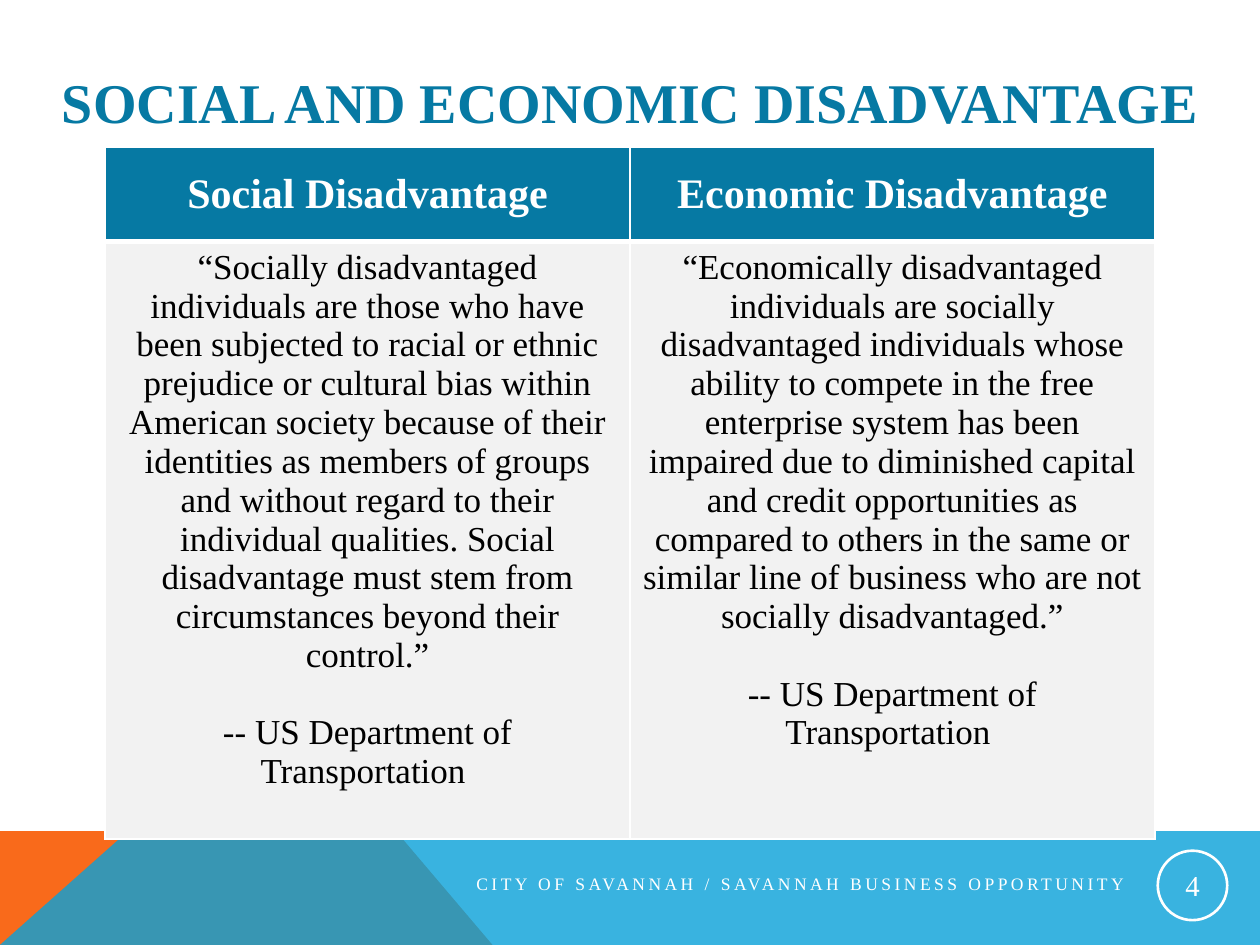
from lxml import etree
from pptx import Presentation
from pptx.dml.color import RGBColor
from pptx.enum.shapes import MSO_SHAPE as Shape
from pptx.enum.text import MSO_ANCHOR as Anchor, PP_ALIGN as Align
from pptx.oxml.ns import qn
from pptx.util import Cm, Pt

FONT = "Times New Roman"
WHITE = RGBColor(0xFF, 0xFF, 0xFF)
BLACK = RGBColor(0x00, 0x00, 0x00)
TEAL = RGBColor(0x06, 0x79, 0xA3)
BLUE = RGBColor(0x08, 0xA1, 0xD9)
ORANGE = RGBColor(0xF9, 0x6A, 0x1B)
GREY = RGBColor(0xF2, 0xF2, 0xF2)

SOURCE = "-- US Department of Transportation "
COLUMNS = [
    ("Social Disadvantage",
     "“Socially disadvantaged individuals are those who have been subjected to "
     "racial or ethnic prejudice or cultural bias within American society because "
     "of their identities as members of groups and without regard to their "
     "individual qualities. Social disadvantage must stem from circumstances "
     "beyond their control.”"),
    ("Economic Disadvantage",
     "“Economically disadvantaged individuals are socially disadvantaged "
     "individuals whose ability to compete in the free enterprise system has been "
     "impaired due to diminished capital and credit opportunities as compared to "
     "others in the same or similar line of business who are not socially "
     "disadvantaged.”"),
]


def add_run(p, text, size, color, bold=False, align=Align.CENTER):
    p.alignment = align
    r = p.add_run()
    r.text = text
    r.font.name = FONT
    r.font.size = Pt(size)
    r.font.bold = bold
    r.font.color.rgb = color
    return r


def add_text(s, text, box, size, color, **style):
    sp = s.shapes.add_textbox(*map(Cm, box))
    tf = sp.text_frame
    tf.word_wrap = True
    tf.vertical_anchor = Anchor.MIDDLE
    return add_run(tf.paragraphs[0], text, size, color, **style)


def add_polygon(s, points, color, opacity=100):
    start, *rest = [(Cm(x), Cm(y)) for x, y in points]
    builder = s.shapes.build_freeform(*start)
    builder.add_line_segments(rest, close=True)
    sp = builder.convert_to_shape()
    sp.shadow.inherit = False
    sp.fill.solid()
    sp.fill.fore_color.rgb = color
    sp.line.fill.background()
    if opacity < 100:
        clr = sp.fill._xPr.find(".//" + qn("a:srgbClr"))
        etree.SubElement(clr, qn("a:alpha"), val=str(opacity * 1000))


def add_outlined(s, kind, box, width, fill=None):
    sp = s.shapes.add_shape(kind, *map(Cm, box))
    sp.shadow.inherit = False
    if fill is None:
        sp.fill.background()
    else:
        sp.fill.solid()
        sp.fill.fore_color.rgb = fill
    sp.line.color.rgb = WHITE
    sp.line.width = Pt(width)
    return sp


def style_cell(cell, fill, top, bottom):
    tc_pr = cell._tc.get_or_add_tcPr()
    for side, width in (("L", 1), ("R", 1), ("T", top), ("B", bottom)):
        ln = etree.SubElement(tc_pr, qn("a:ln" + side), w=str(Pt(width)))
        solid = etree.SubElement(ln, qn("a:solidFill"))
        etree.SubElement(solid, qn("a:srgbClr"), val=str(WHITE))
    cell.fill.solid()
    cell.fill.fore_color.rgb = fill


def add_comparison(s):
    frame = s.shapes.add_table(2, len(COLUMNS), Cm(2.12), Cm(2.97), Cm(21.16), Cm(13.1))
    table = frame.table
    table.rows[0].height = Cm(1.9)
    table.rows[1].height = Cm(11.2)
    for i, (heading, quote) in enumerate(COLUMNS):
        head, body = table.cell(0, i), table.cell(1, i)
        style_cell(head, TEAL, top=1, bottom=3)
        style_cell(body, GREY, top=3, bottom=1)
        head.vertical_anchor = Anchor.MIDDLE
        add_run(head.text_frame.paragraphs[0], heading, 24, WHITE, bold=True)
        tf = body.text_frame
        add_run(tf.paragraphs[0], quote, 20, BLACK)
        p = tf.add_paragraph()
        p.space_before = Pt(22)
        add_run(p, SOURCE, 20, BLACK)


def add_page_number(s, text):
    sp = add_outlined(s, Shape.OVAL, (23.34, 17.15, 1.4, 1.4), 1.5)
    tf = sp.text_frame
    tf.margin_left = tf.margin_right = tf.margin_top = tf.margin_bottom = Cm(0.03)
    tf.vertical_anchor = Anchor.MIDDLE
    add_run(tf.paragraphs[0], text, 16.5, WHITE)


def main():
    prs = Presentation()
    prs.slide_width, prs.slide_height = Cm(25.4), Cm(19.05)
    s = prs.slides.add_slide(prs.slide_layouts[6])

    # Coloured band, covered by the white page area
    add_polygon(s, [(0, 19.05), (0, 14.02), (5.66, 14.02), (9.93, 19.05)], ORANGE)
    add_polygon(s, [(0, 19.05), (5.66, 14.02), (25.4, 14.05), (25.4, 19.05)], BLUE, 80)
    add_outlined(s, Shape.RECTANGLE, (0, 0, 25.4, 16.71), 2, WHITE)

    # Title
    add_text(s, "SOCIAL AND ECONOMIC DISADVANTAGE", (0.74, 1.27, 23.93, 1.52),
             32, TEAL, bold=True)

    # Footer
    r = add_text(s, "CITY OF SAVANNAH / SAVANNAH BUSINESS OPPORTUNITY",
                 (8.69, 17.45, 14.22, 0.74), 10, WHITE, align=Align.RIGHT)
    r.font._element.set("spc", "200")
    add_page_number(s, "4")

    # Comparison table
    add_comparison(s)

    prs.save("out.pptx")


if __name__ == "__main__":
    main()
